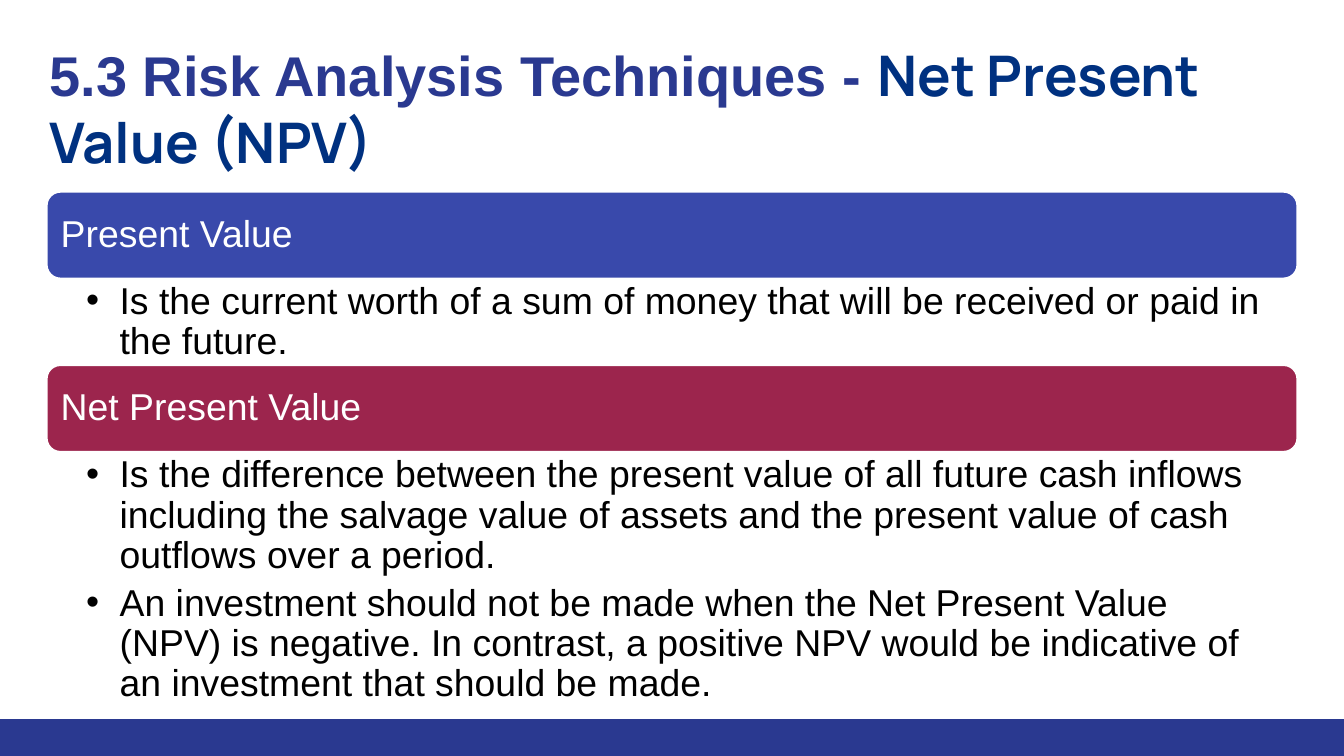
from lxml import etree
from pptx import Presentation
from pptx.dml.color import RGBColor
from pptx.enum import shapes, text
from pptx.oxml import ns
from pptx.util import Inches, Pt

COLORS = {
    "navy": "2A3990",
    "title_blue": "003180",
    "indigo": "3949AB",
    "crimson": "9C254D",
    "white": "FFFFFF",
    "black": "000000",
}
LEFT, WIDTH = 0.34, 9.32
HEADER_HEIGHT = 0.66

# header, colour, top, height of the bullet box, bullets
SECTIONS = [
    ("Present Value", "indigo", 1.42, 0.63, [
        "Is the current worth of a sum of money that will be received or paid in the future.",
    ]),
    ("Net Present Value", "crimson", 2.71, 1.85, [
        "Is the difference between the present value of all future cash inflows including "
        "the salvage value of assets and the present value of cash outflows over a period.",
        "An investment should not be made when the Net Present Value (NPV) is negative. "
        "In contrast, a positive NPV would be indicative of an investment that should be made.",
    ]),
]


def rgb(name):
    return RGBColor.from_string(COLORS[name])


def style_run(r, size, color, font="Arial", bold=False):
    r.font.size = Pt(size)
    r.font.name = font
    r.font.bold = bold
    r.font.color.rgb = rgb(color)


def set_frame(tf, left, top, right, bottom, anchor=text.MSO_ANCHOR.TOP):
    tf.word_wrap = True
    tf.auto_size = text.MSO_AUTO_SIZE.NONE
    tf.vertical_anchor = anchor
    tf.margin_left, tf.margin_top = Inches(left), Inches(top)
    tf.margin_right, tf.margin_bottom = Inches(right), Inches(bottom)


def add_block(s, kind, left, top, width, height, color):
    sp = s.shapes.add_shape(kind, Inches(left), Inches(top), Inches(width), Inches(height))
    sp.shadow.inherit = False
    sp.fill.solid()
    sp.fill.fore_color.rgb = rgb(color)
    sp.line.fill.background()
    return sp


def add_textbox(s, left, top, width, height):
    return s.shapes.add_textbox(
        Inches(left), Inches(top), Inches(width), Inches(height)).text_frame


def add_bullet(p):
    pPr = p._p.get_or_add_pPr()
    pPr.set("marL", str(Inches(0.25)))
    pPr.set("indent", str(Inches(-0.25)))
    etree.SubElement(pPr, ns.qn("a:buFont")).set("typeface", "Arial")
    etree.SubElement(pPr, ns.qn("a:buChar")).set("char", "•")


def add_title(s):
    tf = add_textbox(s, 0.27, 0.2, 9.2, 0.89)
    set_frame(tf, 0.1, 0.1, 0.1, 0.1)
    p = tf.paragraphs[0]
    for words, font, color in (
        ("5.3 Risk Analysis Techniques - ", "Arial", "navy"),
        ("Net Present Value (NPV)", "Manrope", "title_blue"),
    ):
        r = p.add_run()
        r.text = words
        style_run(r, 30, color, font, bold=True)


def add_header(s, words, color, top):
    sp = add_block(s, shapes.MSO_SHAPE.ROUNDED_RECTANGLE,
                   LEFT, top, WIDTH, HEADER_HEIGHT, color)
    sp.line.color.rgb = rgb("white")
    sp.line.width = Pt(2)
    tf = sp.text_frame
    set_frame(tf, 0.08, 0.08, 0.08, 0.08, text.MSO_ANCHOR.MIDDLE)
    tf.text = words
    p = tf.paragraphs[0]
    p.alignment = text.PP_ALIGN.LEFT
    p.line_spacing = 0.9
    style_run(p.runs[0], 20, "white")


def add_bullets(s, items, top, height):
    tf = add_textbox(s, LEFT, top, WIDTH, height)
    set_frame(tf, 0.3, 0.03, 0.16, 0.03)
    tf.text = "\n".join(items)
    for p in tf.paragraphs:
        add_bullet(p)
        p.line_spacing = 0.9
        p.space_after = Pt(4)
        style_run(p.runs[0], 20, "black")


def main():
    prs = Presentation()
    prs.slide_width = Inches(10)
    prs.slide_height = prs.slide_width * 9 // 16
    s = prs.slides.add_slide(prs.slide_layouts[6])
    add_block(s, shapes.MSO_SHAPE.RECTANGLE, 0, 5.35, 10, 0.28, "navy")
    for header, color, top, height, items in SECTIONS:
        add_header(s, header, color, top)
        add_bullets(s, items, top + HEADER_HEIGHT - 0.01, height)
    add_title(s)
    prs.save("out.pptx")


if __name__ == "__main__":
    main()
